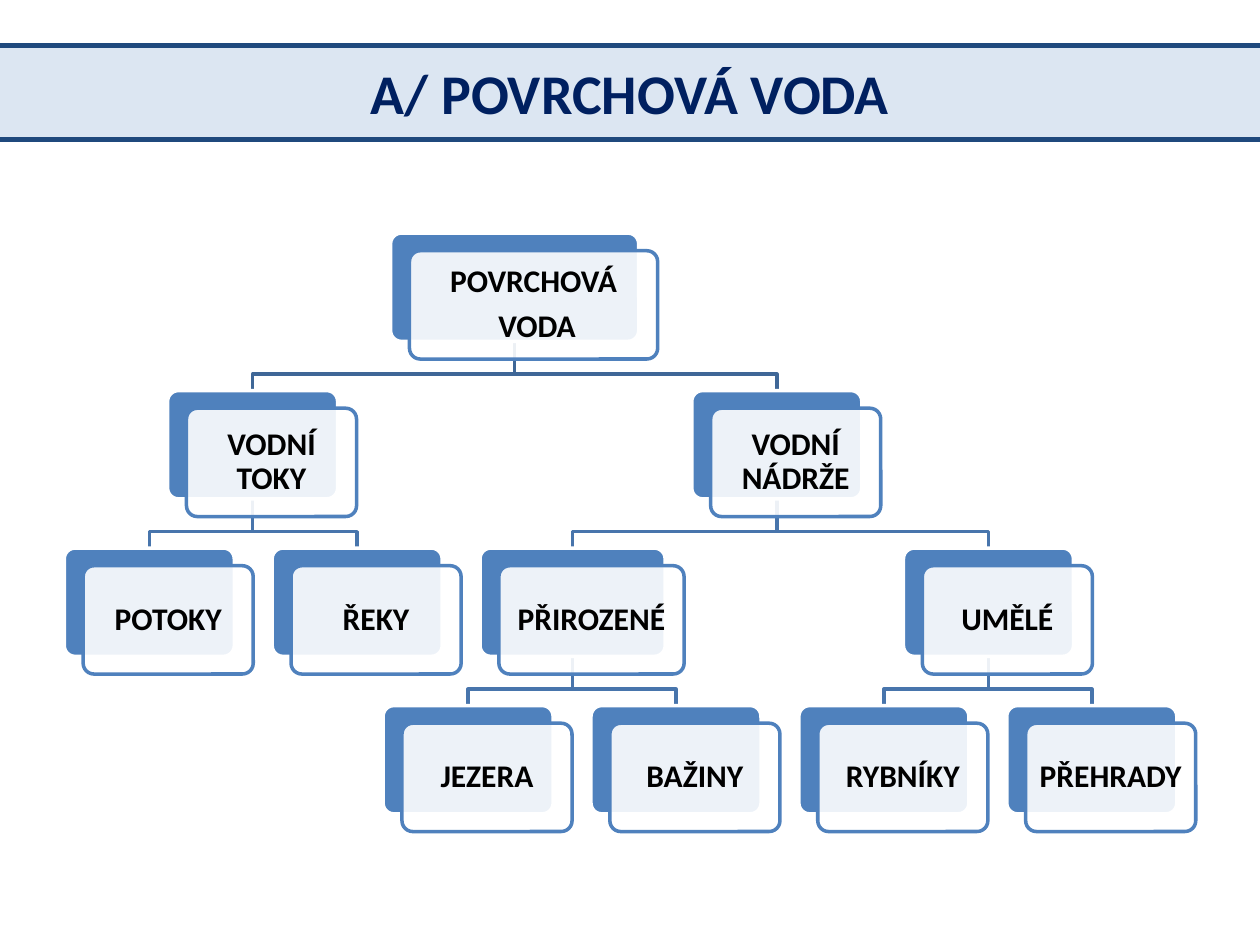
from lxml import etree
from pptx import Presentation
from pptx.dml.color import RGBColor
from pptx.enum.shapes import MSO_SHAPE
from pptx.enum.text import MSO_ANCHOR, PP_ALIGN
from pptx.oxml.ns import qn
from pptx.util import Inches, Pt

TITLE = "A/ POVRCHOVÁ VODA"

# key: (paragraphs, parent, level, horizontal centre, width)
NODES = {
    "root": (["POVRCHOVÁ", " VODA"], None, 0, 4.085, 1.97),
    "streams": (["VODNÍ TOKY"], "root", 1, 2.005, 1.35),
    "brooks": (["POTOKY"], "streams", 2, 1.185, 1.35),
    "rivers": (["ŘEKY"], "streams", 2, 2.835, 1.35),
    "reservoirs": (["VODNÍ NÁDRŽE"], "root", 1, 6.165, 1.35),
    "natural": (["PŘIROZENÉ"], "reservoirs", 2, 4.545, 1.47),
    "lakes": (["JEZERA"], "natural", 3, 3.715, 1.35),
    "marshes": (["BAŽINY"], "natural", 3, 5.365, 1.35),
    "artificial": (["UMĚLÉ"], "reservoirs", 2, 7.845, 1.35),
    "ponds": (["RYBNÍKY"], "artificial", 3, 7.015, 1.35),
    "dams": (["PŘEHRADY"], "artificial", 3, 8.665, 1.35),
}

FONT = "Calibri"
WHITE = RGBColor(0xFF, 0xFF, 0xFF)
BLACK = RGBColor(0, 0, 0)
BLUE = RGBColor(0x4F, 0x81, 0xBD)
NAVY = RGBColor(0x00, 0x20, 0x60)
BAND_FILL = RGBColor(0xDC, 0xE6, 0xF2)
BAND_LINE = RGBColor(0x1F, 0x49, 0x7D)
ROOT_BRANCH = RGBColor(0x3F, 0x67, 0x97)
LOWER_BRANCH = RGBColor(0x48, 0x75, 0xAC)

TOP, LEVEL_STEP, BOX_HEIGHT = 1.85, 1.25, 0.86
CARD_DX, CARD_DY = 0.15, 0.14
ELBOW_DROP = 0.26
INSET = 0.07


def level_top(level):
    return TOP + level * LEVEL_STEP


def add_box(slide, preset, left, top, width, height, fill, line, line_width):
    box = slide.shapes.add_shape(
        preset, Inches(left), Inches(top), Inches(width), Inches(height))
    box.shadow.inherit = False
    box.fill.solid()
    box.fill.fore_color.rgb = fill
    box.line.color.rgb = line
    box.line.width = Pt(line_width)
    return box


def style_paragraph(paragraph, size, color):
    paragraph.alignment = PP_ALIGN.CENTER
    paragraph.font.name = FONT
    paragraph.font.size = Pt(size)
    paragraph.font.bold = True
    paragraph.font.color.rgb = color


def add_title(slide):
    band = add_box(slide, MSO_SHAPE.RECTANGLE, -0.12, 0.36, 10.24, 0.75,
                   BAND_FILL, BAND_LINE, 3)
    frame = band.text_frame
    frame.vertical_anchor = MSO_ANCHOR.MIDDLE
    frame.text = TITLE
    style_paragraph(frame.paragraphs[0], 32, NAVY)


def add_branch(slide, parent, child):
    """Draw the elbow from the parent's bottom edge to the child's top edge."""
    _, _, parent_level, parent_x, _ = parent
    _, _, child_level, child_x, _ = child
    start = level_top(parent_level) + BOX_HEIGHT
    elbow = start + ELBOW_DROP
    points = [(parent_x, elbow), (child_x, elbow),
              (child_x, level_top(child_level))]
    builder = slide.shapes.build_freeform(
        Inches(parent_x), Inches(start))
    builder.add_line_segments(
        [(Inches(x), Inches(y)) for x, y in points], close=False)
    branch = builder.convert_to_shape()
    branch.shadow.inherit = False
    branch.fill.background()
    branch.line.color.rgb = ROOT_BRANCH if parent_level == 0 else LOWER_BRANCH
    branch.line.width = Pt(2)


def add_node(slide, node):
    """Draw a blue back plate and a translucent white card with the label."""
    lines, _, level, centre, width = node
    left, top = centre - width / 2, level_top(level)
    plate = add_box(slide, MSO_SHAPE.ROUNDED_RECTANGLE, left, top,
                    width, BOX_HEIGHT, BLUE, WHITE, 2)
    card = add_box(slide, MSO_SHAPE.ROUNDED_RECTANGLE, left + CARD_DX,
                   top + CARD_DY, width, BOX_HEIGHT, WHITE, BLUE, 2)
    for shape in (plate, card):
        shape.adjustments[0] = 0.1
    white = card.fill._xPr.find(qn("a:solidFill"))[0]
    etree.SubElement(white, qn("a:alpha"), val="90000")

    frame = card.text_frame
    frame.word_wrap = True
    frame.vertical_anchor = MSO_ANCHOR.MIDDLE
    frame.margin_left = frame.margin_right = Inches(INSET)
    frame.margin_top = frame.margin_bottom = Inches(INSET)
    frame.text = "\n".join(lines)
    for paragraph in frame.paragraphs:
        paragraph.line_spacing = 0.9
        paragraph.space_after = Pt(6.3)
        style_paragraph(paragraph, 18, BLACK)


def main():
    deck = Presentation()
    deck.slide_width, deck.slide_height = Inches(10), Inches(7.5)
    slide = deck.slides.add_slide(deck.slide_layouts[6])
    add_title(slide)
    for node in NODES.values():
        if node[1]:
            add_branch(slide, NODES[node[1]], node)
    for node in NODES.values():
        add_node(slide, node)
    deck.save("out.pptx")


if __name__ == "__main__":
    main()
